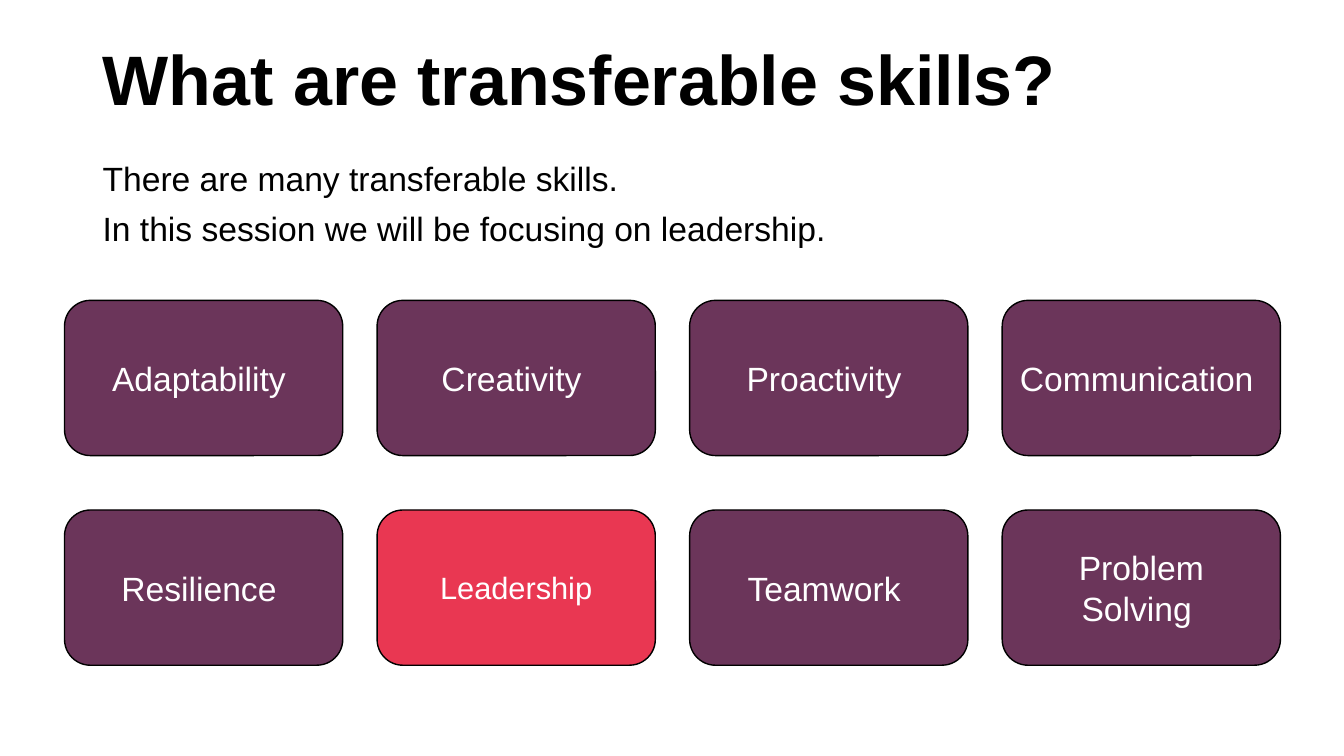
from pptx import Presentation
from pptx import util as u
from pptx.dml.color import RGBColor
from pptx.enum import shapes, text

COLORS = {"ink": "000000", "paper": "FFFFFF", "plum": "6B355A", "coral": "E93752"}

deck = Presentation()
deck.slide_width, deck.slide_height = u.Inches(13.33), u.Inches(7.5)
page = deck.slides.add_slide(deck.slide_layouts[6])


def write(box, lines, size=24, color="ink", bold=False, align=text.PP_ALIGN.LEFT,
          anchor=text.MSO_ANCHOR.TOP, spacing=None, gap=0):
    frame = box.text_frame
    frame.word_wrap = True
    frame.vertical_anchor = anchor
    for index, line in enumerate(lines):
        para = frame.add_paragraph() if index else frame.paragraphs[0]
        para.alignment = align
        para.line_spacing = spacing
        para.space_before = u.Pt(gap if index else 0)
        span = para.add_run()
        span.text = line
        span.font.name = "Arial"
        span.font.size = u.Pt(size)
        span.font.bold = bold
        span.font.color.rgb = RGBColor.from_string(COLORS[color])


text_left, text_width = u.Inches(0.92), u.Inches(11.5)
title = page.shapes.add_textbox(text_left, u.Inches(0.4), text_width, u.Inches(1.45))
write(title, ["What are transferable skills?"], size=50, bold=True, spacing=0.9)

intro = page.shapes.add_textbox(text_left, u.Inches(1.56), text_width, u.Inches(4.38))
write(intro, ["There are many transferable skills.",
              "In this session we will be focusing on leadership."], spacing=0.9, gap=10)

skills = [
    ["Adaptability ", "Creativity ", "Proactivity ", "Communication "],
    ["Resilience ", "Leadership", "Teamwork ", "Problem Solving "],
]
grid_left, grid_top = 0.64, 2.98
column_step, row_step = 3.1, 2.08
card_width, card_height = u.Inches(2.76), u.Inches(1.54)

for row, names in enumerate(skills):
    for column, name in enumerate(names):
        focus = name == "Leadership"
        card = page.shapes.add_shape(
            shapes.MSO_SHAPE.ROUNDED_RECTANGLE,
            u.Inches(grid_left + column * column_step), u.Inches(grid_top + row * row_step),
            card_width, card_height)
        card.shadow.inherit = False
        card.fill.solid()
        card.fill.fore_color.rgb = RGBColor.from_string(COLORS["coral" if focus else "plum"])
        card.line.color.rgb = RGBColor.from_string(COLORS["ink"])
        card.line.width = u.Pt(1)
        write(card, [name], size=22 if focus else 24, color="paper",
              align=text.PP_ALIGN.CENTER, anchor=text.MSO_ANCHOR.MIDDLE)

deck.save("out.pptx")
